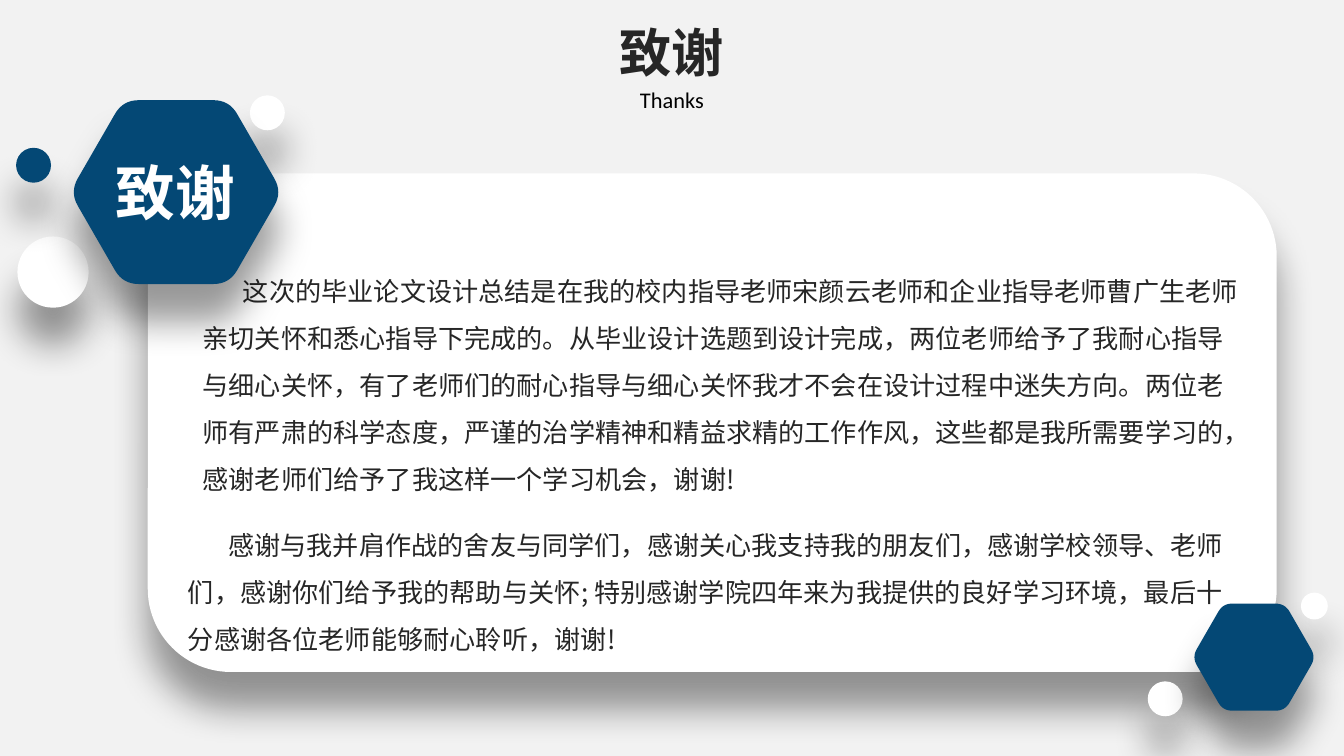
"""Build the closing thanks slide."""
from dataclasses import dataclass
from math import cos, radians, sin

from lxml.etree import SubElement
from pptx import Presentation
from pptx.dml.color import RGBColor
from pptx.enum.shapes import MSO_SHAPE as Kind
from pptx.enum.text import MSO_AUTO_SIZE as Fit, PP_ALIGN as Align
from pptx.oxml.ns import qn
from pptx.util import Inches, Pt

NAVY, WHITE, INK = "044875", "FFFFFF", "262626"
SANS = "Noto Sans CJK SC"


@dataclass(frozen=True)
class Dot:
    left: float
    top: float
    size: float
    color: str = WHITE


@dataclass(frozen=True)
class Hexagon:
    x: float
    y: float
    radius: float


@dataclass(frozen=True)
class Label:
    text: str
    left: float
    top: float
    width: float
    height: float
    size: int
    color: str = INK
    font: str = SANS
    bold: bool = False
    wrap: bool = False


@dataclass(frozen=True)
class Note:
    text: str
    left: float
    top: float
    width: float
    height: float


DOTS = [
    Dot(0.13, 1.76, 0.53),
    Dot(0.12, 1.1, 0.26, NAVY),
    Dot(1.86, 0.71, 0.26),
    Dot(8.54, 5.07, 0.26),
    Dot(9.68, 4.41, 0.2),
]
NOTES = [
    Note("这次的毕业论文设计总结是在我的校内指导老师宋颜云老师和企业指导老师曹广生老师"
         "亲切关怀和悉心指导下完成的。从毕业设计选题到设计完成，两位老师给予了我耐心指导"
         "与细心关怀，有了老师们的耐心指导与细心关怀我才不会在设计过程中迷失方向。两位老"
         "师有严肃的科学态度，严谨的治学精神和精益求精的工作作风，这些都是我所需要学习的，"
         "感谢老师们给予了我这样一个学习机会，谢谢!", 1.41, 1.88, 7.96, 1.83),
    Note("感谢与我并肩作战的舍友与同学们，感谢关心我支持我的朋友们，感谢学校领导、老师"
         "们，感谢你们给予我的帮助与关怀; 特别感谢学院四年来为我提供的良好学习环境，最后"
         "十分感谢各位老师能够耐心聆听，谢谢!", 1.3, 3.77, 7.94, 1.12),
]
BADGE = Hexagon(1.31, 1.43, 0.79)
ACCENT = Hexagon(9.33, 4.89, 0.46)
BADGE_TEXT = Label("致谢", 0.75, 1.11, 1.11, 0.64, 32, WHITE, bold=True, wrap=True)
TITLES = [
    Label("致谢", 4.5, 0.1, 1, 0.57, 28, bold=True),
    Label("Thanks", 4.65, 0.59, 0.7, 0.3, 12, "000000", "Calibri"),
]


def paint(fill, color: str) -> None:
    fill.solid()
    fill.fore_color.rgb = RGBColor.from_string(color)


def finish(shape, color: str) -> None:
    paint(shape.fill, color)
    shape.line.fill.background()
    shape.shadow.inherit = False
    effects = shape._element.spPr.find(qn("a:effectLst"))
    shadow = SubElement(effects, qn("a:outerShdw"), blurRad=str(Pt(20)), dist=str(Pt(20)),
                        dir="5400000", algn="t", rotWithShape="0")
    tint = SubElement(shadow, qn("a:srgbClr"), val="000000")
    SubElement(tint, qn("a:alpha"), val="40000")


def add_dot(slide, dot: Dot) -> None:
    size = Inches(dot.size)
    shape = slide.shapes.add_shape(Kind.OVAL, Inches(dot.left), Inches(dot.top), size, size)
    finish(shape, dot.color)


def add_hexagon(slide, item: Hexagon, cut: float = 0.15, steps: int = 8) -> None:
    tips = [(item.x + item.radius * cos(radians(a)), item.y + item.radius * sin(radians(a)))
            for a in range(0, 360, 60)]
    points = []
    for i, tip in enumerate(tips):
        start, end = [[t + cut * (n - t) for t, n in zip(tip, near)]
                      for near in (tips[i - 1], tips[(i + 1) % 6])]
        for step in range(steps + 1):
            t = step / steps
            points.append([Inches((1 - t) ** 2 * s + 2 * t * (1 - t) * m + t * t * e)
                           for s, m, e in zip(start, tip, end)])
    outline = slide.shapes.build_freeform(*points[0])
    outline.add_line_segments(points[1:], close=True)
    finish(outline.convert_to_shape(), NAVY)


def add_box(slide, item: Label | Note, wrap: bool):
    box = slide.shapes.add_textbox(Inches(item.left), Inches(item.top),
                                   Inches(item.width), Inches(item.height))
    frame = box.text_frame
    frame.text = item.text
    frame.word_wrap = wrap
    frame.auto_size = Fit.SHAPE_TO_FIT_TEXT
    return frame.paragraphs[0]


def style(para, size: int, color: str, face: str, bold: bool = False) -> None:
    for run in para.runs:
        font = run.font
        font.size, font.name, font.bold = Pt(size), face, bold
        font.color.rgb = RGBColor.from_string(color)
        SubElement(run._r.get_or_add_rPr(), qn("a:ea"), typeface=face)


def add_label(slide, label: Label) -> None:
    para = add_box(slide, label, label.wrap)
    para.alignment = Align.CENTER
    style(para, label.size, label.color, label.font, label.bold)


def add_note(slide, note: Note) -> None:
    para = add_box(slide, note, True)
    para.line_spacing = 1.5
    para._p.get_or_add_pPr().set("indent", str(Inches(0.3)))
    style(para, 14, INK, SANS)


def main() -> None:
    deck = Presentation()
    deck.slide_width = Inches(10)
    deck.slide_height = deck.slide_width * 9 // 16
    slide = deck.slides.add_slide(deck.slide_layouts[6])
    paint(slide.background.fill, "F2F2F2")
    card = slide.shapes.add_shape(Kind.ROUNDED_RECTANGLE, Inches(1.1), Inches(1.29),
                                  Inches(8.4), Inches(3.71))
    finish(card, WHITE)
    for dot in DOTS:
        add_dot(slide, dot)
    for note in NOTES:
        add_note(slide, note)
    add_hexagon(slide, BADGE)
    add_label(slide, BADGE_TEXT)
    add_hexagon(slide, ACCENT)
    for label in TITLES:
        add_label(slide, label)
    deck.save("out.pptx")


if __name__ == "__main__":
    main()
